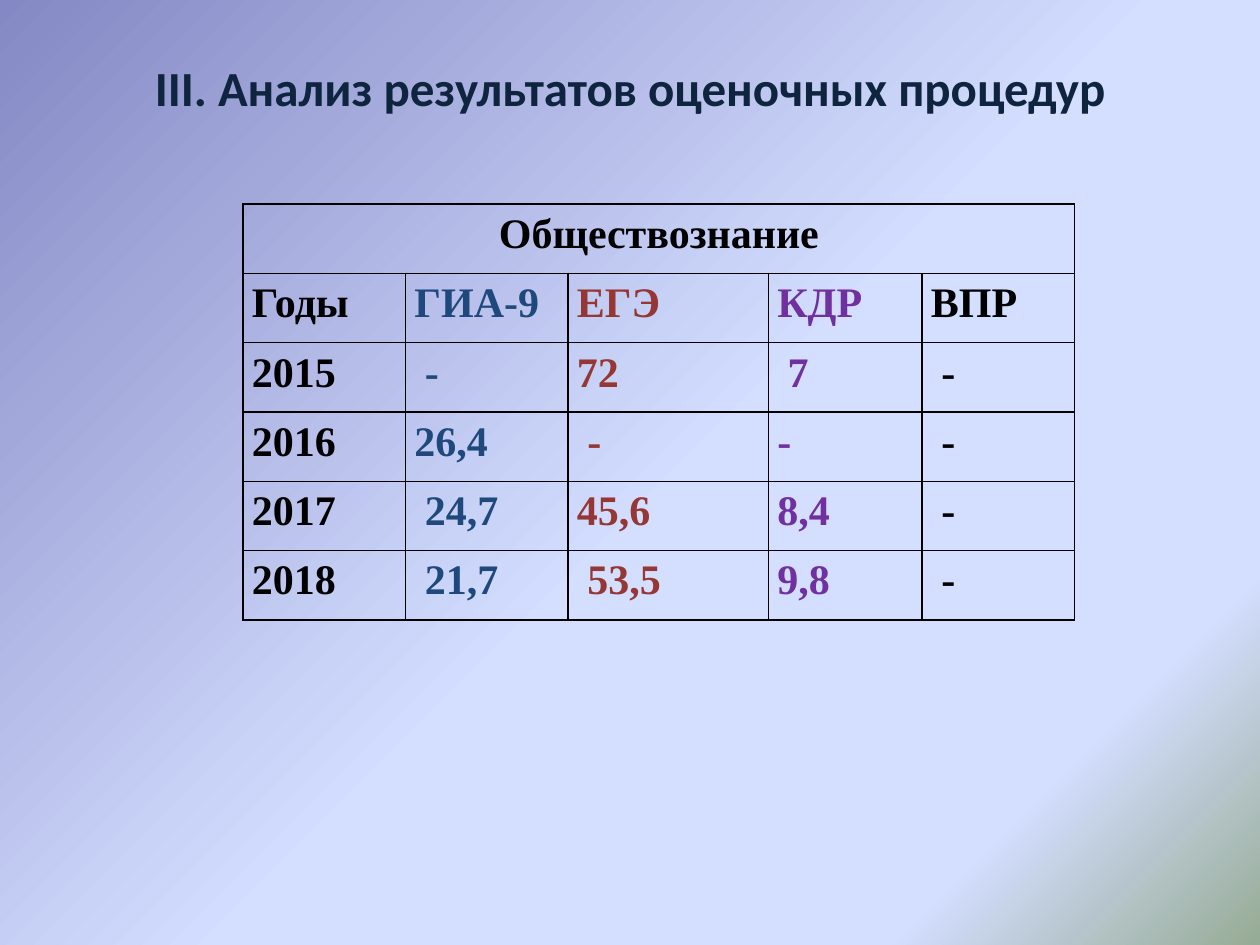
from copy import deepcopy

from lxml.etree import SubElement
from pptx import Presentation
from pptx.dml.color import RGBColor
from pptx.enum.text import MSO_ANCHOR, PP_ALIGN
from pptx.oxml.ns import qn
from pptx.util import Inches, Pt

BLACK = RGBColor(0x00, 0x00, 0x00)
NAVY = RGBColor(0x0F, 0x24, 0x3E)
BLUE = RGBColor(0x1F, 0x49, 0x7D)
RED = RGBColor(0x95, 0x37, 0x35)
PURPLE = RGBColor(0x70, 0x30, 0xA0)
VIOLET = RGBColor(0x84, 0x88, 0xC4)
PALE_BLUE = RGBColor(0xD4, 0xDE, 0xFF)
SAGE = RGBColor(0x96, 0xAB, 0x94)

BACKGROUND_STOPS = [(0, VIOLET), (0.53, PALE_BLUE), (0.83, PALE_BLUE), (1, SAGE)]
SUBJECT = "Обществознание"
COLUMN_WIDTHS = [1.29, 1.29, 1.59, 1.22, 1.21]
COLUMN_COLORS = [BLACK, BLUE, RED, PURPLE, BLACK]
ROW_HEIGHT = 0.55
RESULTS = [
    ["Годы", "ГИА-9", "ЕГЭ", "КДР", "ВПР"],
    ["2015", " -", "72", " 7", " -"],
    ["2016", "26,4", " -", "-", " -"],
    ["2017", " 24,7", "45,6", "8,4", " -"],
    ["2018", " 21,7", " 53,5", "9,8", " -"],
]


def set_background(slide):
    fill = slide.background.fill
    fill.gradient()
    fill.gradient_angle = 315
    stop_list = slide.element.find(".//" + qn("a:gsLst"))
    while len(stop_list) < len(BACKGROUND_STOPS):
        stop_list.append(deepcopy(stop_list[0]))
    for stop, (position, color) in zip(fill.gradient_stops, BACKGROUND_STOPS):
        stop.position = position
        stop.color.rgb = color


def write_text(paragraph, text, font_name, size, color, alignment):
    paragraph.alignment = alignment
    run = paragraph.add_run()
    run.text = text
    font = run.font
    font.name, font.size, font.bold = font_name, Pt(size), True
    font.color.rgb = color


def add_title(slide, text):
    shape = slide.shapes.add_textbox(Inches(0.5), Inches(0.3), Inches(9), Inches(1.25))
    frame = shape.text_frame
    frame.word_wrap = True
    frame.vertical_anchor = MSO_ANCHOR.MIDDLE
    frame.margin_bottom = Inches(0.52)
    write_text(frame.paragraphs[0], text, "Calibri", 28, NAVY, PP_ALIGN.CENTER)


def style_cell(cell):
    cell.margin_left = cell.margin_right = Inches(0.07)
    cell.margin_top = cell.margin_bottom = 0
    properties = cell._tc.get_or_add_tcPr()
    for side in ("a:lnL", "a:lnR", "a:lnT", "a:lnB"):
        line = SubElement(properties, qn(side), w=str(Pt(1)))
        solid = SubElement(line, qn("a:solidFill"))
        SubElement(solid, qn("a:srgbClr"), val=str(BLACK))
    cell.fill.background()


def write_cell(cell, text, color, alignment):
    paragraph = cell.text_frame.paragraphs[0]
    paragraph.line_spacing = 1.15
    write_text(paragraph, text, "Times New Roman", 24, color, alignment)


def add_results_table(slide):
    row_count, column_count = len(RESULTS) + 1, len(COLUMN_WIDTHS)
    table = slide.shapes.add_table(
        row_count, column_count, Inches(1.93), Inches(1.62),
        Inches(sum(COLUMN_WIDTHS)), Inches(ROW_HEIGHT * row_count),
    ).table
    table.first_row = table.horz_banding = False
    for column, width in zip(table.columns, COLUMN_WIDTHS):
        column.width = Inches(width)
    for row in table.rows:
        row.height = Inches(ROW_HEIGHT)
    for cell in table.iter_cells():
        style_cell(cell)
    table.cell(0, 0).merge(table.cell(0, column_count - 1))
    write_cell(table.cell(0, 0), SUBJECT, BLACK, PP_ALIGN.CENTER)
    for row_index, values in enumerate(RESULTS, start=1):
        for column_index, (value, color) in enumerate(zip(values, COLUMN_COLORS)):
            write_cell(table.cell(row_index, column_index), value, color, PP_ALIGN.JUSTIFY)


def main():
    """Build the slide with the assessment results and save it."""
    presentation = Presentation()
    presentation.slide_width = Inches(10)
    presentation.slide_height = Inches(7.5)
    slide = presentation.slides.add_slide(presentation.slide_layouts[6])
    set_background(slide)
    add_title(slide, "III. Анализ результатов оценочных процедур")
    add_results_table(slide)
    presentation.save("out.pptx")


if __name__ == "__main__":
    main()
